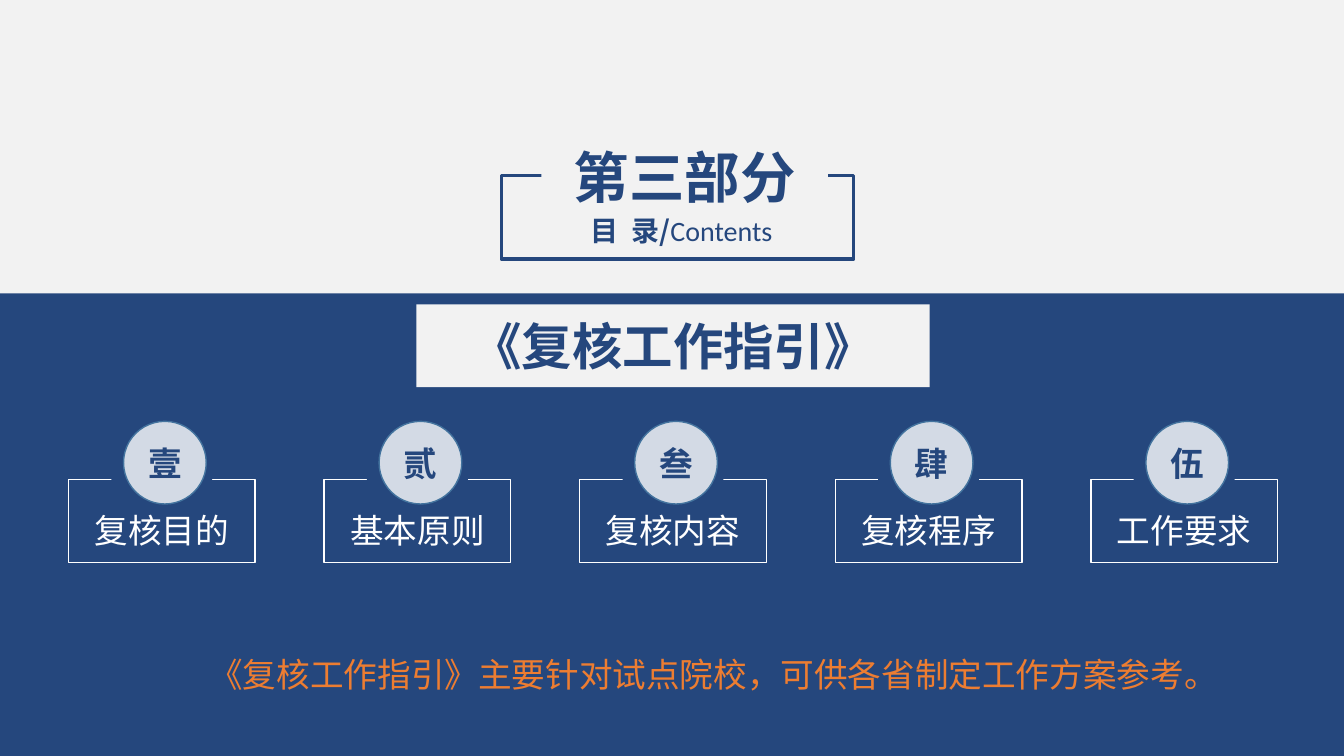
import pptx
import pptx.dml.color
import pptx.enum.shapes
import pptx.enum.text
import pptx.oxml.ns
import pptx.util
from lxml import etree

Inches = pptx.util.Inches
Pt = pptx.util.Pt
SHAPES = pptx.enum.shapes.MSO_SHAPE
ANCHORS = pptx.enum.text.MSO_ANCHOR
qn = pptx.oxml.ns.qn

COLORS = {
    "paper": "F2F2F2",
    "navy": "25477D",
    "white": "FFFFFF",
    "rim": "43739E",
    "orange": "ED7D31",
}
CJK_FONT = "Noto Sans CJK SC"
SLIDE_WIDTH, SLIDE_HEIGHT = 13.33, 7.5

SECTIONS = [
    ("壹", "复核目的"),
    ("贰", "基本原则"),
    ("叁", "复核内容"),
    ("肆", "复核程序"),
    ("伍", "工作要求"),
]
SECTION_LEFT, SECTION_TOP, SECTION_PITCH = 0.68, 4.18, 2.535


def rgb(name):
    return pptx.dml.color.RGBColor.from_string(COLORS[name])


def set_typeface(font, name):
    """Set the typeface for Latin and East Asian letters alike."""
    font.name = name
    latin = font._rPr.find(qn("a:latin"))
    east_asian = etree.Element(qn("a:ea"), typeface=name)
    latin.addnext(east_asian)


def write(shape, text, size, color, bold=False):
    """Put one centred line in the shape and return its paragraph."""
    frame = shape.text_frame
    frame.word_wrap = True
    paragraph = frame.paragraphs[0]
    paragraph.text = text
    paragraph.alignment = pptx.enum.text.PP_ALIGN.CENTER
    paragraph.font.size = Pt(size)
    paragraph.font.bold = bold
    paragraph.font.color.rgb = rgb(color)
    set_typeface(paragraph.font, CJK_FONT)
    return paragraph


def add_box(shapes, left, top, width, height, fill, line=None, line_width=1,
            kind=SHAPES.RECTANGLE):
    shape = shapes.add_shape(kind, Inches(left), Inches(top),
                             Inches(width), Inches(height))
    shape.shadow.inherit = False
    shape.fill.solid()
    shape.fill.fore_color.rgb = rgb(fill)
    if line:
        shape.line.color.rgb = rgb(line)
        shape.line.width = Pt(line_width)
    else:
        shape.line.fill.background()
    shape.text_frame.vertical_anchor = ANCHORS.MIDDLE
    return shape


def add_label(shapes, left, top, width, height, text, size, color):
    label = shapes.add_textbox(Inches(left), Inches(top),
                               Inches(width), Inches(height))
    return write(label, text, size, color)


def add_heading(slide, left, top, width, height):
    """Framed part title, whose fill interrupts the frame's top edge."""
    add_box(slide.shapes, left, top, width, height, "paper", "navy", 2.25)
    contents = add_label(slide.shapes, left + 0.29, top + 0.33, 3, 0.44,
                         "", 20, "navy")
    for text, typeface, bold in (("目  录/", CJK_FONT, True),
                                 ("Contents", "Calibri", False)):
        run = contents.add_run()
        run.text = text
        run.font.bold = bold
        set_typeface(run.font, typeface)

    title = slide.shapes.title
    title.left, title.top = Inches(left + 0.4), Inches(top - 0.35)
    title.width, title.height = Inches(2.84), Inches(0.71)
    title.fill.solid()
    title.fill.fore_color.rgb = rgb("paper")
    write(title, "第三部分", 39.6, "navy", bold=True)
    title.text_frame.vertical_anchor = ANCHORS.MIDDLE
    title.text_frame.auto_size = pptx.enum.text.MSO_AUTO_SIZE.NONE
    title.element.getparent().append(title.element)


def add_section(slide, left, top, width, height, numeral, name):
    """Frame with a numbered disc over a gap in its top edge."""
    shapes = slide.shapes.add_group_shape().shapes
    center = left + width / 2
    disc, frame_height, gap, label_width = 0.82, 0.82, 1, 1.77
    frame_top = top + height - frame_height
    add_box(shapes, left, frame_top, width, frame_height, "navy", "white")
    add_box(shapes, center - gap / 2, frame_top - 0.05, gap, 0.08, "navy")
    add_label(shapes, center - label_width / 2, frame_top + 0.25,
              label_width, 0.5, name, 24, "white")
    badge = add_box(shapes, center - disc / 2 + 0.03, top, disc, disc,
                    "white", "rim", kind=SHAPES.OVAL)
    fill_color = badge.element.spPr.find(
        qn("a:solidFill") + "/" + qn("a:srgbClr"))
    etree.SubElement(fill_color, qn("a:alpha"), val="80000")
    write(badge, numeral, 24, "navy", bold=True)


def build_contents_slide(presentation):
    slide = presentation.slides.add_slide(presentation.slide_layouts[5])
    slide.background.fill.solid()
    slide.background.fill.fore_color.rgb = rgb("paper")
    band_top = 2.91
    add_box(slide.shapes, 0, band_top, SLIDE_WIDTH, SLIDE_HEIGHT - band_top,
            "navy")
    add_heading(slide, 4.97, 1.74, 3.5, 0.83)
    for index, (numeral, name) in enumerate(SECTIONS):
        add_section(slide, SECTION_LEFT + index * SECTION_PITCH, SECTION_TOP,
                    1.85, 1.4, numeral, name)
    add_label(slide.shapes, 1.91, 6.44, 10, 0.5,
              "《复核工作指引》主要针对试点院校，可供各省制定工作方案参考。",
              24, "orange")
    banner = add_box(slide.shapes, 4.13, 3.02, 5.09, 0.82, "paper")
    write(banner, "《复核工作指引》", 36, "navy", bold=True)


def main():
    presentation = pptx.Presentation()
    presentation.slide_width = Inches(SLIDE_WIDTH)
    presentation.slide_height = Inches(SLIDE_HEIGHT)
    build_contents_slide(presentation)
    presentation.save("out.pptx")


if __name__ == "__main__":
    main()
